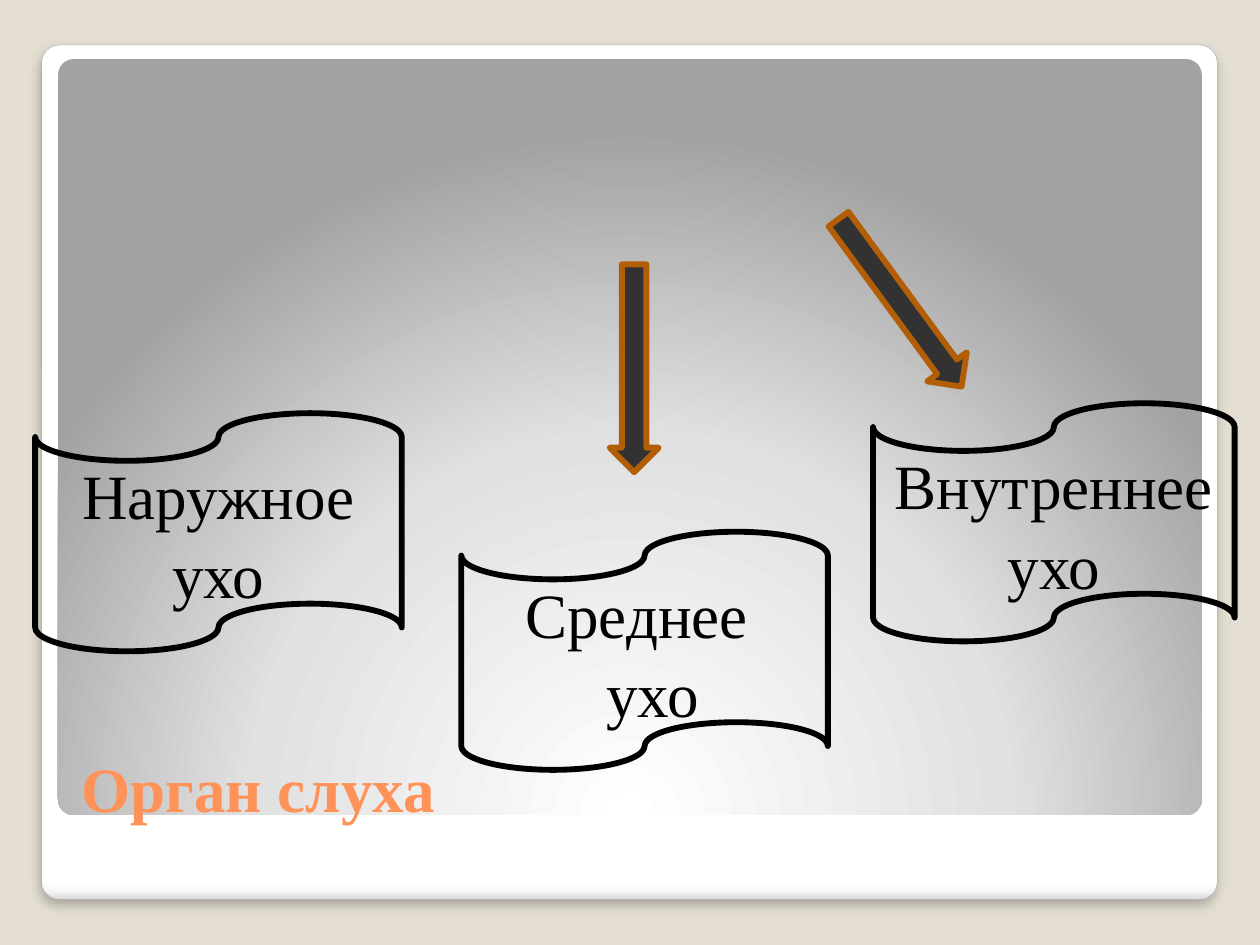
import pptx
import pptx.util
import pptx.dml.color
import pptx.enum.shapes
import pptx.enum.text
import pptx.oxml

Cm = pptx.util.Cm
Pt = pptx.util.Pt
RGBColor = pptx.dml.color.RGBColor
KIND = pptx.enum.shapes.MSO_SHAPE
ALIGN = pptx.enum.text.PP_ALIGN
ANCHOR = pptx.enum.text.MSO_ANCHOR

SAND = RGBColor(0xE3, 0xDE, 0xD1)
GRAY = RGBColor(0xA4, 0xA4, 0xA4)
CORAL = RGBColor(0xFF, 0x92, 0x58)
DARK = RGBColor(0x32, 0x32, 0x32)
RUST = RGBColor(0xB2, 0x5E, 0x07)
BLACK = RGBColor(0, 0, 0)
NS = 'xmlns:a="http://schemas.openxmlformats.org/drawingml/2006/main"'

deck = pptx.Presentation()
deck.slide_width = Cm(25.4)
deck.slide_height = Cm(19.05)
slide = deck.slides.add_slide(deck.slide_layouts[6])
slide.background.fill.solid()
slide.background.fill.fore_color.rgb = SAND


def add_form(kind, place, line=None, width=0):
    form = slide.shapes.add_shape(kind, *[Cm(n) for n in place])
    form.shadow.inherit = False
    form.fill.background()
    if line is None:
        form.line.fill.background()
    else:
        form.line.color.rgb = line
        form.line.width = Pt(width)
    return form


def add_text(par, text, color, bold=False):
    run = par.add_run()
    run.text = text
    run.font.name = "Times New Roman"
    run.font.size = Pt(36)
    run.font.bold = bold
    run.font.color.rgb = color


frame = add_form(KIND.ROUNDED_RECTANGLE, (0.84, 0.91, 23.7, 17.22), GRAY, 0.16)
panel = add_form(KIND.ROUNDED_RECTANGLE, (1.17, 1.19, 23.06, 15.24))
fades = [
    (frame, [(0, "FFFFFF"), (98, "FFFFFF"), (99, "F7F7F7"), (100, "DADADA")],
     '<a:lin ang="5400000" scaled="0"/>'),
    (panel, [(0, "FFFFFF"), (55, "E1E1E1"), (100, "A2A2A2")],
     '<a:path path="circle"><a:fillToRect l="50000" t="175000" r="50000" b="-75000"/></a:path>'),
]
for form, stops, course in fades:
    form.adjustments[0] = 0.021
    marks = "".join(
        f'<a:gs pos="{pos * 1000}"><a:srgbClr val="{tone}"/></a:gs>' for pos, tone in stops)
    props = form._element.spPr
    blank = props.find(pptx.oxml.ns.qn("a:noFill"))
    props.replace(blank, pptx.oxml.parse_xml(
        f'<a:gradFill {NS} rotWithShape="1"><a:gsLst>{marks}</a:gsLst>{course}</a:gradFill>'))

frame._element.spPr.find(pptx.oxml.ns.qn("a:effectLst")).append(pptx.oxml.parse_xml(
    f'<a:outerShdw {NS} blurRad="{Pt(6)}" dist="{Pt(4)}" dir="5400000" algn="t" rotWithShape="0">'
    '<a:srgbClr val="000000"><a:alpha val="25000"/></a:srgbClr></a:outerShdw>'))

title = slide.shapes.add_textbox(Cm(1.4), Cm(13.84), Cm(22.73), Cm(2.92)).text_frame
title.word_wrap = True
title.vertical_anchor = ANCHOR.BOTTOM
add_text(title.paragraphs[0], "Орган слуха", CORAL, True)

for left, top, turn in [(12.29, 5.33, 0), (17.65, 4.01, 323.7)]:
    arrow = add_form(KIND.DOWN_ARROW, (left, top, 0.99, 4.19), RUST, 3.35)
    arrow.rotation = turn
    arrow.fill.solid()
    arrow.fill.fore_color.rgb = DARK

tapes = [
    (0.71, 8.33, 7.39, ["Наружное ухо"]),
    (9.3, 10.72, 7.39, ["Среднее ", " ухо"]),
    (17.6, 8.13, 7.29, ["Внутреннее ухо"]),
]
for left, top, width, lines in tapes:
    tape = add_form(KIND.FLOWCHART_PUNCHED_TAPE, (left, top, width, 4.8), BLACK, 3.35)
    body = tape.text_frame
    body.word_wrap = True
    body.vertical_anchor = ANCHOR.MIDDLE
    for num, text in enumerate(lines):
        par = body.add_paragraph() if num else body.paragraphs[0]
        par.alignment = ALIGN.CENTER
        par.line_spacing = 1.05
        add_text(par, text, BLACK)

deck.save("out.pptx")
